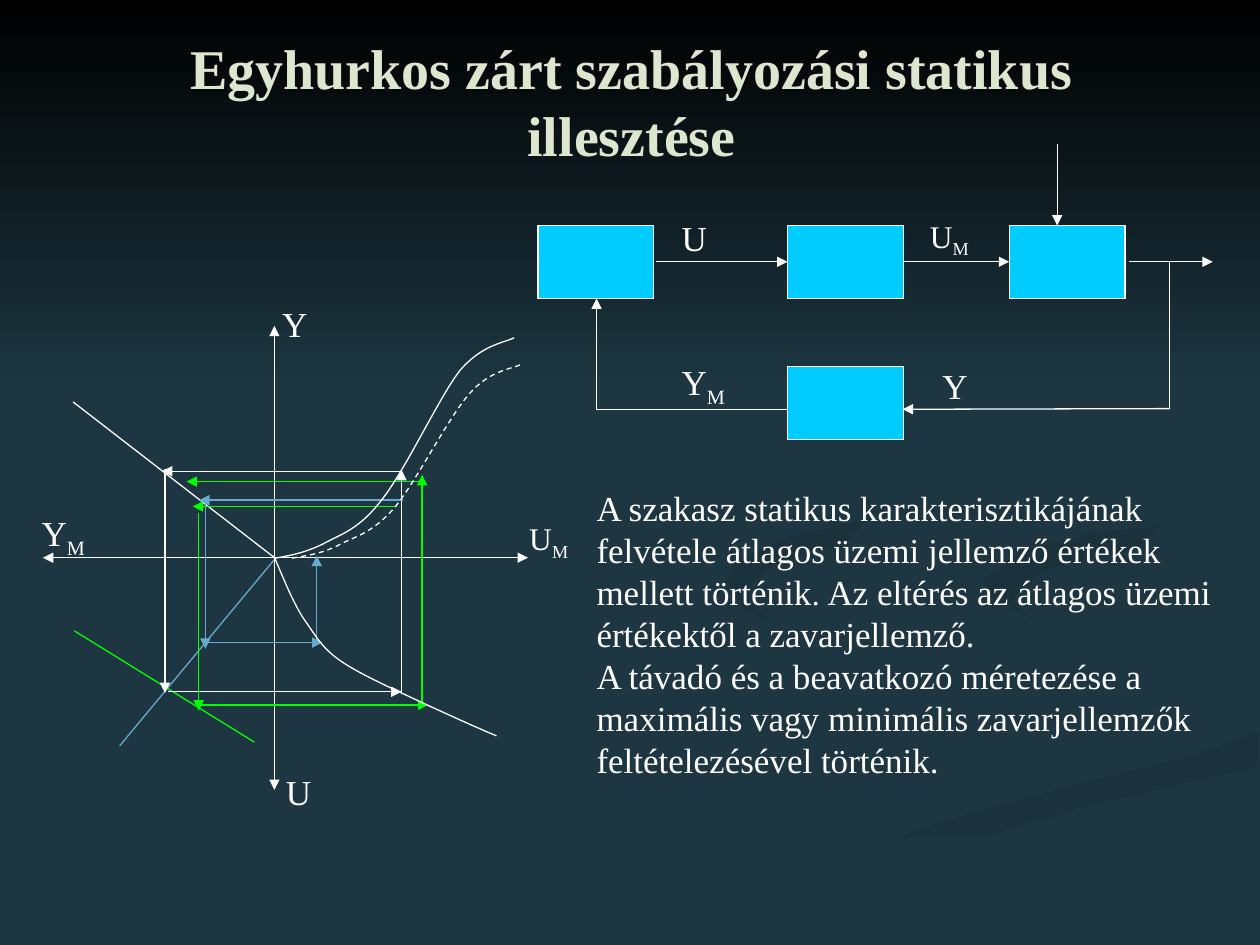
from lxml.etree import SubElement
from pptx import Presentation
from pptx.dml.color import RGBColor
from pptx.enum.dml import MSO_LINE
from pptx.enum.shapes import MSO_CONNECTOR, MSO_SHAPE
from pptx.enum.text import MSO_ANCHOR, PP_ALIGN
from pptx.oxml.ns import qn
from pptx.util import Pt

BACKGROUND = RGBColor(0x1D, 0x36, 0x41)
SWIRL_SOFT = RGBColor(0x1C, 0x34, 0x3E)
SWIRL_DARK = RGBColor(0x1B, 0x32, 0x3C)
BLACK = RGBColor(0, 0, 0)
WHITE = RGBColor(0xFF, 0xFF, 0xFF)
CREAM = RGBColor(0xDF, 0xE6, 0xD0)
CYAN = RGBColor(0x00, 0xCC, 0xFF)
BLUE = RGBColor(0x66, 0xAA, 0xCD)
GREEN = RGBColor(0x00, 0xFF, 0x00)

presentation = Presentation()
presentation.slide_width, presentation.slide_height = Pt(720), Pt(540)
slide = presentation.slides.add_slide(presentation.slide_layouts[6])
shapes = slide.shapes
slide.background.fill.solid()
slide.background.fill.fore_color.rgb = BACKGROUND


def add_outline(points, closed):
    """Add a freeform through points given in pt."""
    scaled = [(Pt(x), Pt(y)) for x, y in points]
    builder = shapes.build_freeform(*scaled[0], scale=1.0)
    builder.add_line_segments(scaled[1:], close=closed)
    shape = builder.convert_to_shape()
    shape.shadow.inherit = False
    return shape


def add_text(box, paragraphs, inset=0, wrap=True, anchor=MSO_ANCHOR.TOP,
             align=PP_ALIGN.LEFT):
    """Add a text box; each paragraph is a list of (text, font values)."""
    frame = shapes.add_textbox(*map(Pt, box)).text_frame
    layout = {"word_wrap": wrap, "vertical_anchor": anchor,
              "margin_left": Pt(inset), "margin_right": Pt(inset),
              "margin_top": 0, "margin_bottom": 0}
    for name, value in layout.items():
        setattr(frame, name, value)
    for index, runs in enumerate(paragraphs):
        paragraph = frame.add_paragraph() if index else frame.paragraphs[0]
        paragraph.alignment = align
        for text, values in runs:
            run = paragraph.add_run()
            run.text = text
            run.font.color.rgb = WHITE
            for name, value in {"name": "Times New Roman", **values}.items():
                setattr(run.font, name, value)
    return frame


# Background swirls and the dark band at the top: end colours, angle, outline
backdrop = [
    (BACKGROUND, SWIRL_SOFT, 0, [
        (562, 398), (536, 387), (491, 374), (451, 361), (423, 346), (413, 334),
        (412, 343), (433, 356), (471, 369), (514, 382), (549, 394), (564, 402),
        (565, 410), (552, 423), (523, 433), (469, 446), (417, 460), (359, 476),
        (300, 497), (243, 523), (216, 539), (260, 539), (310, 514), (359, 495),
        (406, 479), (469, 461), (519, 449), (554, 438), (570, 430), (576, 418),
        (570, 404)]),
    (BACKGROUND, SWIRL_SOFT, 315, [
        (679, 410), (670, 398), (639, 385), (598, 374), (557, 362), (528, 348),
        (521, 334), (526, 348), (544, 364), (574, 377), (615, 388), (648, 401),
        (661, 418), (644, 436), (666, 427), (678, 418)]),
    (SWIRL_DARK, BACKGROUND, 270, [
        (362, 539), (411, 539), (442, 523), (482, 505), (541, 484), (620, 461),
        (719, 438), (719, 418), (684, 431), (624, 446), (550, 466), (477, 490),
        (410, 518), (374, 538)]),
    (SWIRL_DARK, BACKGROUND, 315, [
        (562, 331), (566, 341), (595, 357), (580, 346), (580, 340), (596, 326),
        (632, 316), (687, 307), (719, 302), (719, 289), (672, 299), (623, 305),
        (583, 315)]),
    (SWIRL_DARK, BACKGROUND, 315, [
        (492, 310), (550, 300), (594, 289), (624, 276), (640, 261), (643, 241),
        (629, 215), (607, 198), (575, 180), (549, 168), (580, 183), (609, 201),
        (631, 220), (640, 241), (631, 259), (606, 272), (570, 282), (507, 294),
        (450, 307), (420, 321), (415, 333), (425, 348), (448, 360), (430, 346),
        (428, 335), (442, 323), (467, 314)]),
    (BLACK, BACKGROUND, 270, [(0, 0), (0, 222), (720, 222), (720, 0)]),
]
for first, last, angle, outline in backdrop:
    shape = add_outline(outline, closed=True)
    shape.line.fill.background()
    shape.fill.gradient()
    shape.fill.gradient_angle = angle
    for stop, color in zip(shape.fill.gradient_stops, (first, last)):
        stop.color.rgb = color

# Title
title = add_text((54, 18.7, 614, 78), [[("Egyhurkos zárt szabályozási statikus illesztése",
                 {"size": Pt(32), "bold": True})]], 7.2, True, MSO_ANCHOR.MIDDLE, PP_ALIGN.CENTER)
title.paragraphs[0].runs[0].font.color.rgb = CREAM

# Blocks of the control loop
for left, top in [(576.7, 128.9), (307.4, 128.9), (450, 128.9), (450, 209.5)]:
    block = shapes.add_shape(MSO_SHAPE.RECTANGLE, Pt(left), Pt(top), Pt(66.2), Pt(41.8))
    block.shadow.inherit = False
    block.fill.solid()
    block.fill.fore_color.rgb = CYAN
    block.line.color.rgb = WHITE
    block.line.width = Pt(0.75)

# Straight lines: colour, start x, y, end x, y, arrowheads
TAIL, HEAD, BOTH, NONE = ["tailEnd"], ["headEnd"], ["headEnd", "tailEnd"], []
lines = [
    # Signal paths of the loop
    (WHITE, 340.9, 234, 340.9, 170.6, TAIL),
    (WHITE, 340.9, 234, 450, 234, NONE),
    (WHITE, 645.1, 149.6, 693, 149.6, TAIL),
    (WHITE, 668.4, 233.5, 515.8, 233.9, TAIL),
    (WHITE, 668.4, 233.5, 668.4, 149.6, NONE),
    (WHITE, 374.6, 149.6, 450, 149.6, TAIL),
    (WHITE, 515.8, 149.6, 576.7, 149.6, TAIL),
    (WHITE, 604.1, 82.1, 604.1, 128.9, TAIL),
    # Axes
    (WHITE, 156.8, 451.4, 156.8, 186.2, BOTH),
    (WHITE, 24.5, 318.7, 301.7, 318.7, BOTH),
    # Transmitter and controller characteristics
    (WHITE, 41.8, 229.7, 156.6, 318.5, NONE),
    (BLUE, 156.6, 320, 68.4, 426.2, NONE),
    (GREEN, 42.5, 360.5, 145.4, 424.1, NONE),
    # White working cycle
    (WHITE, 229.5, 396.7, 229.5, 268.6, TAIL),
    (WHITE, 228.5, 269.3, 92.5, 269.3, TAIL),
    (WHITE, 95.8, 395.3, 229.5, 395.3, TAIL),
    (WHITE, 94.3, 396, 94.3, 267.8, HEAD),
    # Blue working cycle
    (BLUE, 230.4, 285.8, 113.8, 285.8, TAIL),
    (BLUE, 117.4, 285.8, 117.4, 370.8, TAIL),
    (BLUE, 117.4, 367.2, 184.3, 367.2, TAIL),
    (BLUE, 181, 367.2, 181, 317.5, TAIL),
    # Green working cycle
    (GREEN, 226.8, 289.4, 110.2, 289.4, TAIL),
    (GREEN, 113.6, 293, 113.6, 406.1, TAIL),
    (GREEN, 113.6, 402.8, 244.8, 402.8, TAIL),
    (GREEN, 241.2, 402.8, 241.2, 271.4, TAIL),
    (GREEN, 242.6, 275.2, 106.6, 275.2, TAIL),
]
for color, x1, y1, x2, y2, arrowheads in lines:
    connector = shapes.add_connector(MSO_CONNECTOR.STRAIGHT, Pt(x1), Pt(y1), Pt(x2), Pt(y2))
    connector.line.color.rgb = color
    connector.line.width = Pt(0.75)
    for end in arrowheads:
        SubElement(connector.line._get_or_add_ln(), qn("a:" + end), type="triangle")
    SubElement(connector._element.spPr, qn("a:effectLst"))

# Curved characteristics: Bezier knots and controls, dash
curves = [
    ([(157, 319), (165.6, 317.5), (173.5, 316.1), (184.3, 311), (194.4, 305.3), (204.5, 303.1),
      (217.4, 286.6), (231.1, 270), (250.6, 227.5), (262.8, 211.7), (275.8, 196.6),
      (288.7, 195.8), (293.8, 193)], None),
    ([(156.4, 317.5), (162, 330.5), (167, 343.4), (173.5, 353.5), (180.7, 363.6), (183.6, 370.1),
      (195.1, 378), (206.6, 385.9), (229.7, 396), (244.8, 403.2), (259.2, 409.7),
      (271.4, 415.4), (283.7, 420.5)], None),
    ([(167, 319), (175, 317.5), (182.9, 316.8), (193, 311.8), (202.3, 306.7), (212.4, 305.3),
      (225.4, 290.2), (237.6, 275.8), (256.3, 238.3), (268.6, 224.6), (280.8, 211),
      (293, 211), (298.1, 208.1)], MSO_LINE.DASH),
]
STEPS = 12
for knots, dash in curves:
    points = [knots[0]]
    for start in range(0, len(knots) - 1, 3):
        for step in range(1, STEPS + 1):
            t = step / STEPS
            weights = ((1 - t) ** 3, 3 * t * (1 - t) ** 2, 3 * t * t * (1 - t), t ** 3)
            controls = zip(*knots[start:start + 4])
            points.append(tuple(sum(w * c for w, c in zip(weights, axis)) for axis in controls))
    curve = add_outline(points, closed=False)
    curve.fill.background()
    curve.line.color.rgb = WHITE
    curve.line.width = Pt(0.75)
    curve.line.dash_style = dash

# Signal labels: left, top, size, letter, subscript
labels = [
    (159.8, 172.8, 20, "Y", ""), (301, 296.6, 18, "U", "M"),
    (162, 440, 20, "U", ""), (22.3, 292.3, 20, "Y", "M"),
    (537.1, 208.1, 20, "Y", ""), (529.9, 123.8, 18, "U", "M"),
    (388.1, 123.8, 20, "U", ""), (388.1, 205.9, 20, "Y", "M"),
]
for left, top, size, letter, subscript in labels:
    values = {"size": Pt(size)}
    runs = [(letter, values)] + ([(subscript, values)] if subscript else [])
    frame = add_text((left, top, 31 if subscript else 20, size * 1.2), [runs], 1.44, False)
    for run in frame.paragraphs[0].runs[1:]:
        run.font._element.set("baseline", "-25000")

# Explanation
body = {"size": Pt(20)}
add_text((340.9, 277.9, 352, 168), [
    [("A szakasz statikus karakterisztikájának felvétele átlagos üzemi jellemző értékek "
      "mellett történik", body), (". ", {"size": Pt(18)}),
     ("Az eltérés az átlagos üzemi értékektől a zavarjellemző.", body)],
    [("A távadó és a beavatkozó méretezése a maximális vagy minimális zavarjellemzők "
      "feltételezésével történik.", body)]])

presentation.save("out.pptx")
